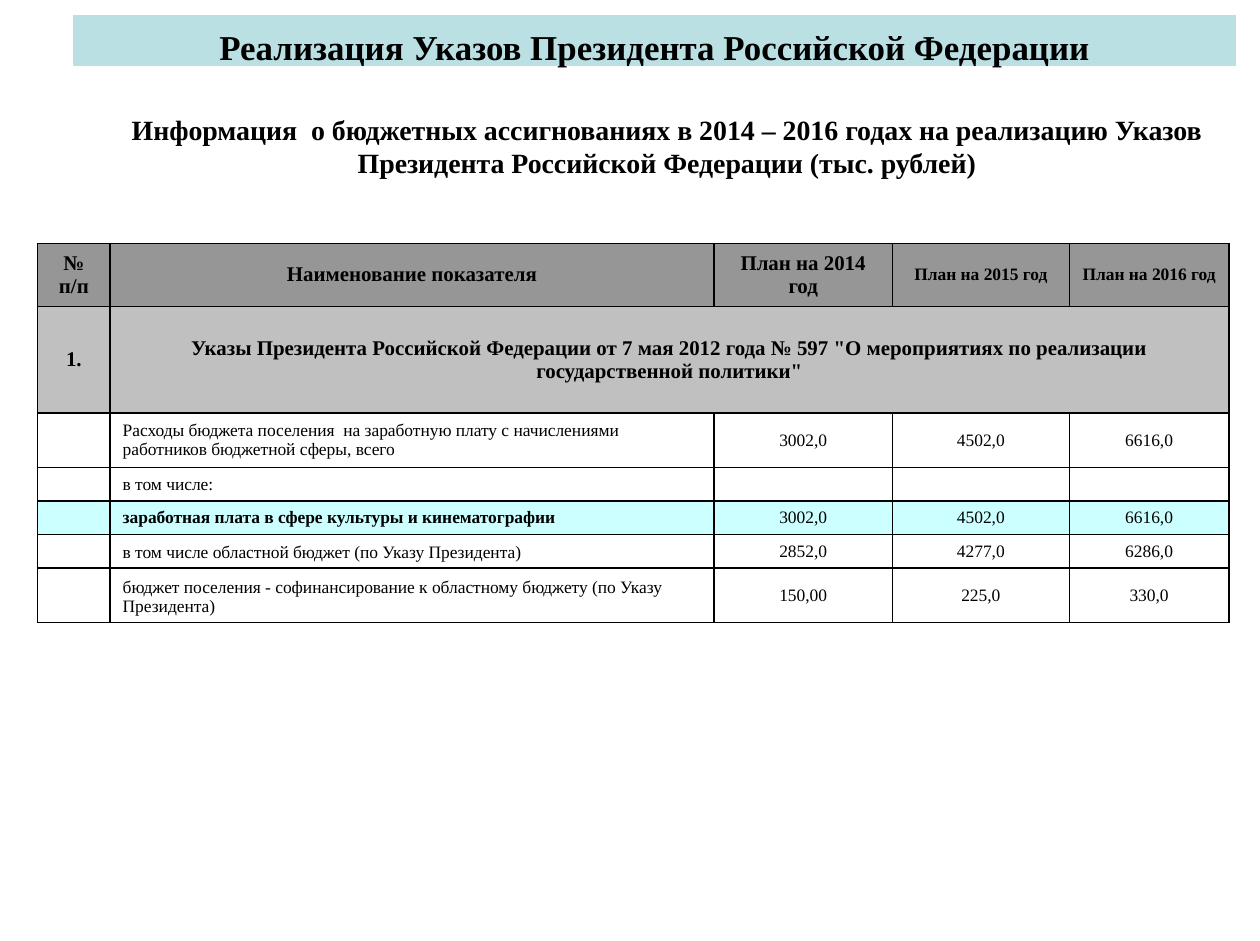
from lxml import etree
from pptx import Presentation
from pptx.dml.color import RGBColor
from pptx.enum import shapes, text
from pptx import util as u
from pptx.oxml.ns import qn

COLORS = {"text": "000000", "band": "BBE0E3", "header": "969696",
          "decree": "C0C0C0", "accent": "CCFFFF", "plain": "FFFFFF"}
CENTER, LEFT = text.PP_ALIGN.CENTER, text.PP_ALIGN.LEFT
MIDDLE, BOTTOM = text.MSO_ANCHOR.MIDDLE, text.MSO_ANCHOR.BOTTOM

COLUMNS = [1.47, 12.22, 3.61, 3.58, 3.23]
HEADER = ["№ п/п", "Наименование показателя",
          "План на 2014 год", "План на 2015 год", "План на 2016 год"]
DECREE = ("Указы Президента Российской Федерации от 7 мая 2012 года № 597 "
          "\"О мероприятиях по реализации государственной политики\"")
# Indicator, yearly values, row height, fill, bold name, name anchor
INDICATORS = [
    ("Расходы бюджета поселения  на заработную плату с начислениями "
     "работников бюджетной сферы, всего",
     ["3002,0", "4502,0", "6616,0"], 1.04, "plain", False, MIDDLE),
    ("в том числе:", ["", "", ""], 0.65, "plain", False, MIDDLE),
    ("заработная плата в сфере культуры и кинематографии",
     ["3002,0", "4502,0", "6616,0"], 0.65, "accent", True, MIDDLE),
    ("в том числе областной бюджет (по Указу Президента)",
     ["2852,0", "4277,0", "6286,0"], 0.65, "plain", False, BOTTOM),
    ("бюджет поселения - софинансирование к областному бюджету "
     "(по Указу Президента)",
     ["150,00", "225,0", "330,0"], 1.04, "plain", False, BOTTOM),
]


def rgb(name):
    return RGBColor.from_string(COLORS[name])


def write(tf, content, size=10, bold=False, align=CENTER, font="Times New Roman"):
    tf.word_wrap = True
    p = tf.paragraphs[0]
    p.alignment = align
    if content:
        r = p.add_run()
        r.text = content
        r.font.name, r.font.size, r.font.bold = font, u.Pt(size), bold
        r.font.color.rgb = rgb("text")
    else:
        # Keeps an empty cell as low as its text size
        end = etree.SubElement(p._p, qn("a:endParaRPr"))
        end.set("sz", str(size * 100))


class Deck:
    def __init__(self, width, height):
        self.prs = Presentation()
        self.prs.slide_width, self.prs.slide_height = u.Cm(width), u.Cm(height)
        self.slide = self.prs.slides.add_slide(self.prs.slide_layouts[6])

    def band(self, content, left, top, width, height, size):
        sp = self.slide.shapes.add_shape(
            shapes.MSO_SHAPE.RECTANGLE, *map(u.Cm, (left, top, width, height)))
        sp.shadow.inherit = False
        sp.fill.solid()
        sp.fill.fore_color.rgb = sp.line.color.rgb = rgb("band")
        sp.line.width = u.Pt(0.75)
        tf = sp.text_frame
        tf.vertical_anchor = text.MSO_ANCHOR.TOP
        tf.margin_top = u.Cm(0.2)
        write(tf, content, size, bold=True)

    def heading(self, content, left, top, width, height, size):
        sp = self.slide.shapes.add_textbox(*map(u.Cm, (left, top, width, height)))
        write(sp.text_frame, content, size, bold=True)

    def table(self, left, top, columns, rows):
        frame = self.slide.shapes.add_table(
            len(rows), len(columns), u.Cm(left), u.Cm(top),
            u.Cm(sum(columns)), u.Cm(sum(rows)))
        table = frame.table
        for column, width in zip(table.columns, columns):
            column.width = u.Cm(width)
        for row, height in zip(table.rows, rows):
            row.height = u.Cm(height)
        return table

    def cell(self, cell, content, fill, anchor=MIDDLE, **style):
        self.borders(cell)
        cell.fill.solid()
        cell.fill.fore_color.rgb = rgb(fill)
        cell.vertical_anchor = anchor
        write(cell.text_frame, content, **style)

    def borders(self, cell, width=1):
        tc_pr = cell._tc.get_or_add_tcPr()
        for side in ("a:lnL", "a:lnR", "a:lnT", "a:lnB"):
            ln = etree.SubElement(tc_pr, qn(side), w=str(u.Pt(width)))
            fill = etree.SubElement(ln, qn("a:solidFill"))
            etree.SubElement(fill, qn("a:srgbClr"), val=COLORS["text"])


def main():
    deck = Deck(25.5, 19.05)

    # Title and subtitle
    deck.band("Реализация Указов Президента Российской Федерации",
              1.5, 0.32, 23.5, 1, size=20)
    deck.heading("Информация  о бюджетных ассигнованиях в 2014 – 2016 годах "
                 "на реализацию Указов Президента Российской Федерации "
                 "(тыс. рублей)", 2.16, 2.15, 22.68, 1.63, size=16)

    # Table header
    heights = [1.2, 2.16] + [item[2] for item in INDICATORS]
    table = deck.table(0.76, 4.93, COLUMNS, heights)
    for col, title in enumerate(HEADER):
        deck.cell(table.cell(0, col), title, "header",
                  size=12 if col < 3 else 10, bold=True)

    # Decree row, merged across name and years
    for col, content in enumerate(["1.", DECREE, "", "", ""]):
        deck.cell(table.cell(1, col), content, "decree", size=12, bold=True)
    table.cell(1, 1).merge(table.cell(1, 4))

    # Indicator rows
    for row, (name, values, _, fill, bold, anchor) in enumerate(INDICATORS, 2):
        deck.cell(table.cell(row, 0), "", fill)
        deck.cell(table.cell(row, 1), name, fill, anchor, bold=bold, align=LEFT)
        for col, value in enumerate(values, 2):
            deck.cell(table.cell(row, col), value, fill)

    deck.prs.save("out.pptx")


if __name__ == "__main__":
    main()
